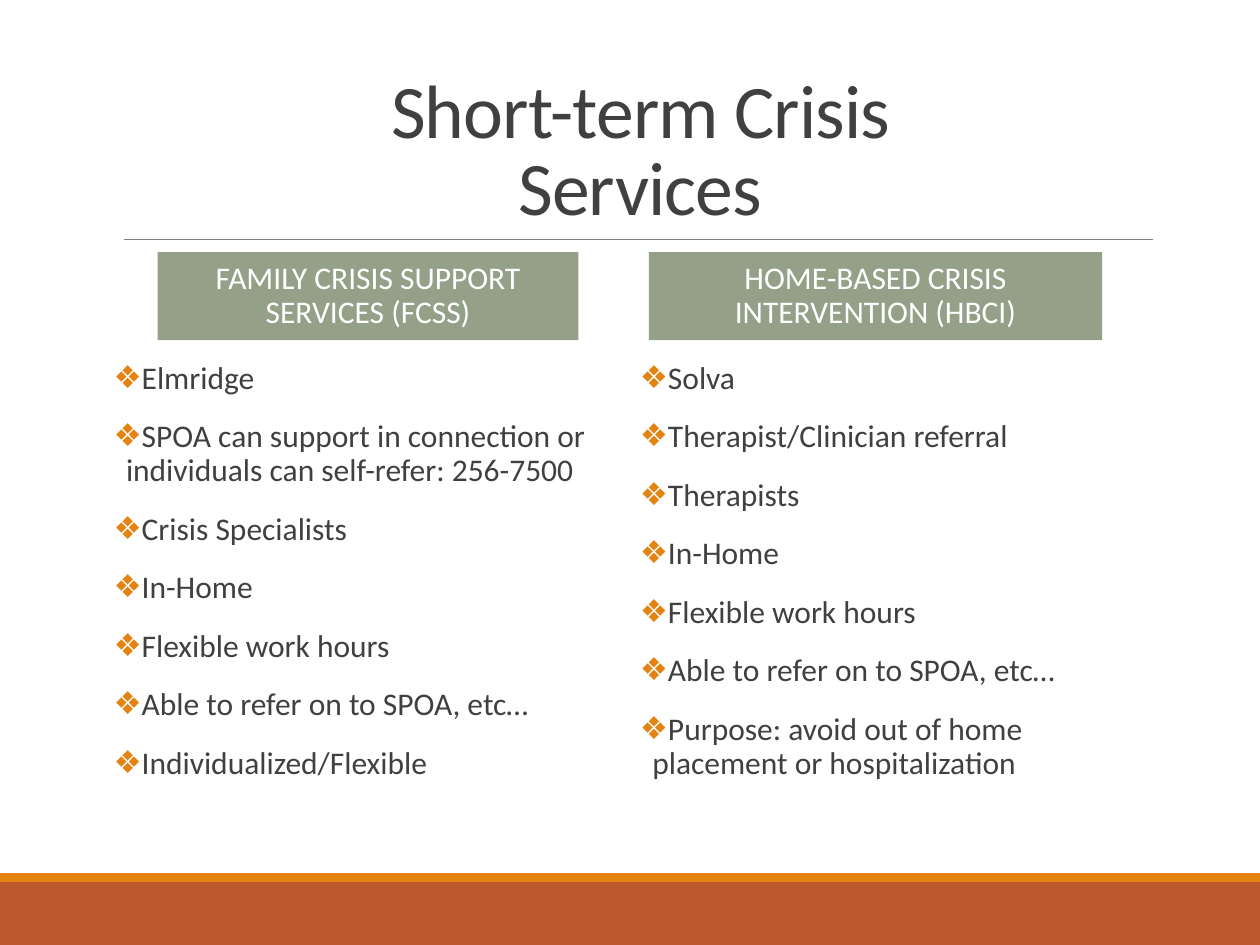
from dataclasses import dataclass

from lxml.etree import SubElement
from pptx import Presentation
from pptx.dml.color import RGBColor
from pptx.enum.shapes import MSO_CONNECTOR, MSO_SHAPE
from pptx.enum.text import MSO_ANCHOR, MSO_AUTO_SIZE, PP_ALIGN
from pptx.oxml.ns import qn
from pptx.slide import Slide
from pptx.text.text import TextFrame
from pptx.util import Cm, Pt

RUST = RGBColor(0xBD, 0x58, 0x2C)
ORANGE = RGBColor(0xE4, 0x83, 0x12)
SAGE = RGBColor(0x94, 0xA0, 0x88)
GRAY = RGBColor(0x80, 0x80, 0x80)
DARK = RGBColor(0x40, 0x40, 0x40)
WHITE = RGBColor(0xFF, 0xFF, 0xFF)
FONT = "Calibri"
COMPARISON_LAYOUT = 4


@dataclass
class Box:
    left: float
    top: float
    width: float
    height: float


@dataclass
class Service:
    heading: str
    heading_box: Box
    items: list[str]
    list_box: Box
    heading_index: int
    list_index: int


SERVICES = [
    Service(
        "FAMILY CRISIS SUPPORT SERVICES (FCSS)",
        Box(3.18, 5.08, 8.48, 1.78),
        [
            "Elmridge",
            "SPOA can support in connection or individuals can self-refer: 256-7500",
            "Crisis Specialists",
            "In-Home",
            "Flexible work hours",
            "Able to refer on to SPOA, etc…",
            "Individualized/Flexible",
        ],
        Box(2.29, 7.17, 10.29, 9.12),
        1,
        2,
    ),
    Service(
        "HOME-BASED CRISIS INTERVENTION (HBCI)",
        Box(13.08, 5.08, 9.14, 1.78),
        [
            "Solva",
            "Therapist/Clinician referral",
            "Therapists",
            "In-Home",
            "Flexible work hours",
            "Able to refer on to SPOA, etc…",
            "Purpose: avoid out of home placement or hospitalization",
        ],
        Box(12.9, 7.17, 9.5, 9.3),
        3,
        4,
    ),
]


def place(shape, box: Box) -> None:
    shape.left, shape.top = Cm(box.left), Cm(box.top)
    shape.width, shape.height = Cm(box.width), Cm(box.height)


def format_text(text_frame: TextFrame, size: float, color: RGBColor,
                line_spacing: float, anchor: MSO_ANCHOR, alignment: PP_ALIGN,
                before: float = 12, after: float = 2) -> None:
    text_frame.word_wrap = True
    text_frame.auto_size = MSO_AUTO_SIZE.NONE
    text_frame.vertical_anchor = anchor
    for paragraph in text_frame.paragraphs:
        paragraph.alignment = alignment
        paragraph.line_spacing = line_spacing
        paragraph.space_before, paragraph.space_after = Pt(before), Pt(after)
        for run in paragraph.runs:
            run.font.name = FONT
            run.font.size = Pt(size)
            run.font.bold = False
            run.font.color.rgb = color


def add_bullets(text_frame: TextFrame) -> None:
    for paragraph in text_frame.paragraphs:
        properties = paragraph._p.get_or_add_pPr()
        properties.set("marL", str(Cm(0.25)))
        properties.set("indent", str(-Cm(0.25)))
        bullet_color = SubElement(properties, qn("a:buClr"))
        SubElement(bullet_color, qn("a:srgbClr"), val=str(ORANGE))
        SubElement(properties, qn("a:buChar"), char="❖")


def add_bar(slide: Slide, box: Box, color: RGBColor) -> None:
    bar = slide.shapes.add_shape(MSO_SHAPE.RECTANGLE, 0, 0, 0, 0)
    place(bar, box)
    bar.shadow.inherit = False
    bar.fill.solid()
    bar.fill.fore_color.rgb = color
    bar.line.fill.background()


def add_rule(slide: Slide) -> None:
    rule = slide.shapes.add_connector(
        MSO_CONNECTOR.STRAIGHT, Cm(2.49), Cm(4.83), Cm(23.24), Cm(4.83))
    rule.line.color.rgb = GRAY
    rule.line.width = Pt(0.5)
    SubElement(rule._element.spPr, qn("a:effectLst"))


def fill_title(slide: Slide) -> None:
    title = slide.shapes.title
    place(title, Box(5.82, 1.82, 14.17, 2.97))
    title.text_frame.text = "Short-term Crisis Services"
    format_text(title.text_frame, 43.2, DARK, 0.85, MSO_ANCHOR.BOTTOM,
                PP_ALIGN.CENTER, before=0, after=0)
    for run in title.text_frame.paragraphs[0].runs:
        run._r.get_or_add_rPr().set("spc", "-50")


def fill_service(slide: Slide, service: Service) -> None:
    placeholders = {shape.placeholder_format.idx: shape
                    for shape in slide.placeholders}
    heading = placeholders[service.heading_index]
    place(heading, service.heading_box)
    heading.fill.solid()
    heading.fill.fore_color.rgb = SAGE
    heading.text_frame.text = service.heading
    format_text(heading.text_frame, 18, WHITE, 0.9, MSO_ANCHOR.MIDDLE,
                PP_ALIGN.CENTER)

    body = placeholders[service.list_index]
    place(body, service.list_box)
    body.text_frame.text = "\n".join(service.items)
    body.text_frame.margin_left = body.text_frame.margin_right = 0
    format_text(body.text_frame, 18, DARK, 0.9, MSO_ANCHOR.TOP, PP_ALIGN.LEFT)
    add_bullets(body.text_frame)


def main() -> None:
    presentation = Presentation()
    presentation.slide_width, presentation.slide_height = Cm(25.4), Cm(19.05)
    layout = presentation.slide_layouts[COMPARISON_LAYOUT]
    slide = presentation.slides.add_slide(layout)
    add_bar(slide, Box(0, 17.78, 25.4, 1.27), RUST)
    add_bar(slide, Box(0, 17.6, 25.4, 0.18), ORANGE)
    add_rule(slide)
    fill_title(slide)
    for service in SERVICES:
        fill_service(slide, service)
    presentation.save("out.pptx")


if __name__ == "__main__":
    main()
